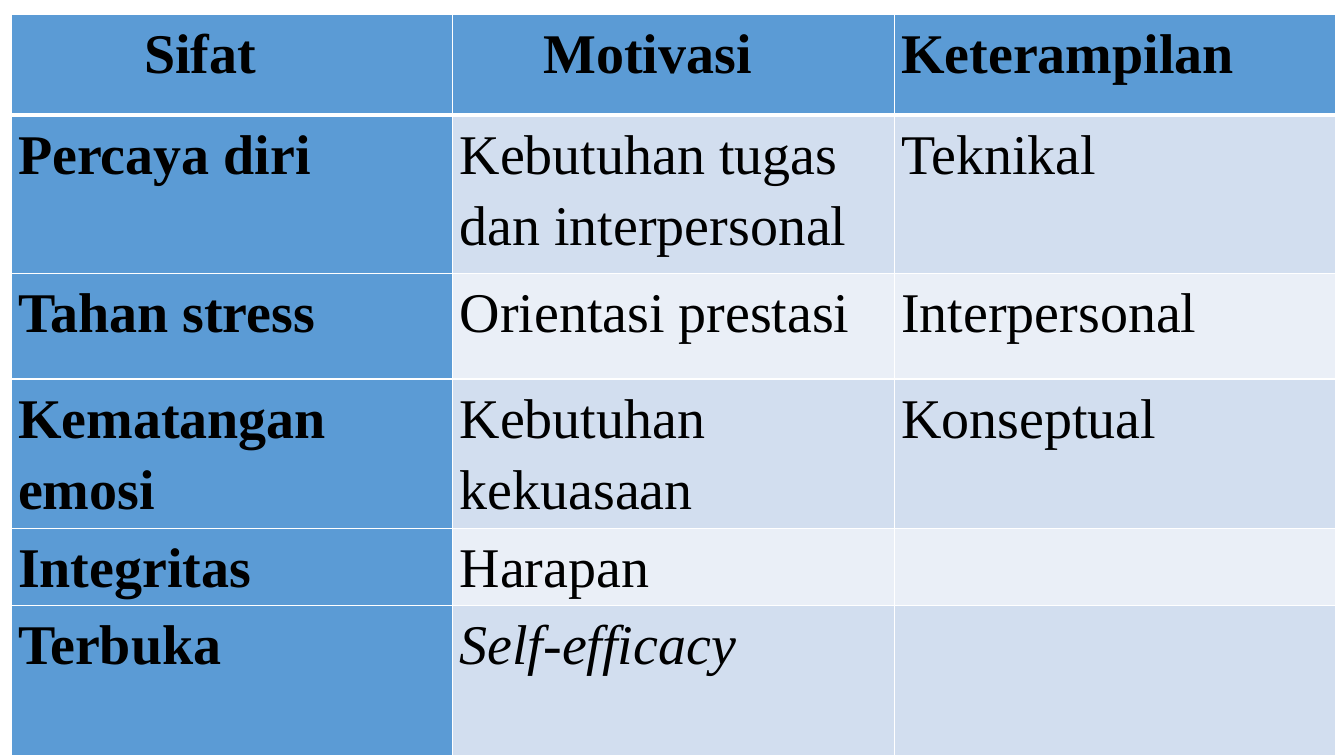
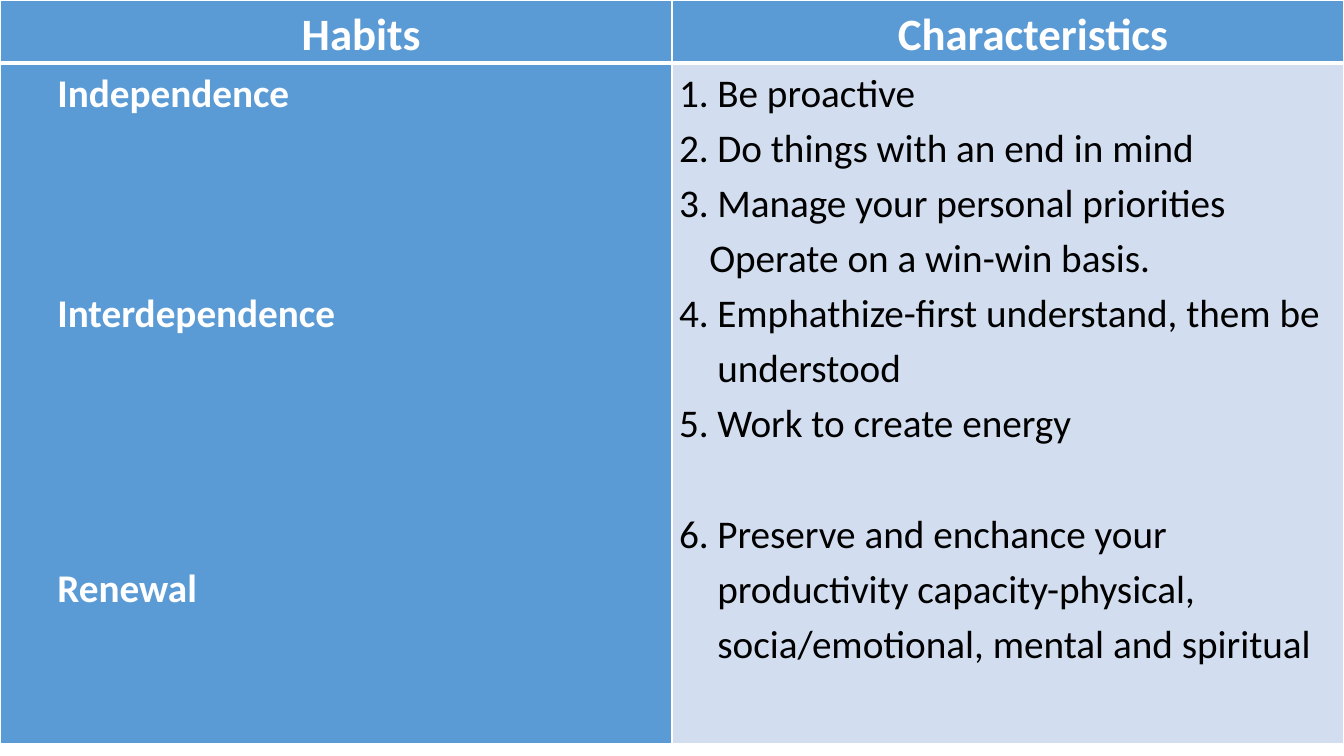
"""Build two table slides on leadership traits and on habits."""
from dataclasses import dataclass
from pptx import Presentation
from pptx.dml.color import RGBColor
from pptx.enum.text import PP_ALIGN
from pptx.oxml.ns import qn
from pptx.util import Inches, Pt
from lxml import etree


@dataclass(frozen=True)
class Theme:
    accent: str = "5B9BD5"
    bands: tuple = ("D2DEEF", "EAEFF7")
    white: str = "FFFFFF"
    black: str = "000000"
    serif: str = "Times New Roman"
    sans: str = "Calibri"
    trait_size: int = 40
    heading_size: int = 32
    habit_size: int = 28
    line_spacing: float = 1.15
    habit_pitch: float = 39.3
    inset: float = 0.07
    thin: int = 1
    thick: int = 3


@dataclass(frozen=True)
class Line:
    text: str
    indent: float = 0
    hanging: float = 0
    blank_lines: int = 0
    start: int = 0
    align: PP_ALIGN = PP_ALIGN.LEFT
    italic: bool = False


@dataclass(frozen=True)
class Style:
    font: str
    size: int
    color: str
    bold: bool = False


THEME = Theme()

TRAIT_HEADINGS = [("Sifat", 1.25), ("Motivasi", 0.83), ("Keterampilan", 0)]
TRAITS = [
    ("Percaya diri", "Kebutuhan tugas dan interpersonal", "Teknikal"),
    ("Tahan stress", "Orientasi prestasi", "Interpersonal"),
    ("Kematangan emosi", "Kebutuhan kekuasaan", "Konseptual"),
    ("Integritas", "Harapan", ""),
    ("Terbuka", "Self-efficacy", ""),
]
LEFT_ALIGNED = {"Kebutuhan tugas dan interpersonal"}
ITALIC = {"Self-efficacy"}
TRAIT_BOX = (0.11, 0.14, 13.14)
TRAIT_ROWS = [1, 1.57, 1.05, 1.48, 0.77, 1.49]

HABIT_HEADINGS = ["Habits", "Characteristics"]
HABITS = [("Independence", 0), ("Interdependence", 3), ("Renewal", 4)]
CHARACTERISTICS = [
    ("Be proactive", 1, 0),
    ("Do things with an end in mind", 1, 0),
    ("Manage your personal priorities", 1, 0),
    ("Operate on a win-win basis.", 0, 0),
    ("Emphathize-first understand, them be understood", 4, 0),
    ("Work to create energy", 4, 0),
    ("Preserve and enchance your productivity capacity-physical, "
     "socia/emotional, mental and spiritual", 6, 1),
]
HABIT_BOX = (0, 0, 13.33)
HABIT_ROWS = [0.62, 6.75]


def set_borders(cell, row):
    """Draw white cell borders, thick under the heading row."""
    properties = cell._tc.get_or_add_tcPr()
    widths = {
        "L": THEME.thin,
        "R": THEME.thin,
        "T": THEME.thick if row == 1 else THEME.thin,
        "B": THEME.thick if row == 0 else THEME.thin,
    }
    for side, width in widths.items():
        border = etree.SubElement(properties, qn(f"a:ln{side}"), w=str(Pt(width)))
        fill = etree.SubElement(border, qn("a:solidFill"))
        etree.SubElement(fill, qn("a:srgbClr"), val=THEME.white)


def write_line(paragraph, line, style):
    """Write one styled line with its indent, gap and number."""
    paragraph.alignment = line.align
    paragraph.line_spacing = THEME.line_spacing
    if line.blank_lines:
        paragraph.space_before = Pt(line.blank_lines * THEME.habit_pitch)
    properties = paragraph._p.get_or_add_pPr()
    properties.set("marL", str(Inches(line.indent)))
    properties.set("indent", str(Inches(-line.hanging)))
    if line.start:
        etree.SubElement(properties, qn("a:buAutoNum"),
                         type="arabicPeriod", startAt=str(line.start))
    run = paragraph.add_run()
    run.text = line.text
    font = run.font
    font.name, font.size = style.font, Pt(style.size)
    font.bold, font.italic = style.bold, line.italic
    font.color.rgb = RGBColor.from_string(style.color)


def fill_cell(cell, row, color, lines, style):
    """Format a cell and write its lines."""
    set_borders(cell, row)
    cell.fill.solid()
    cell.fill.fore_color.rgb = RGBColor.from_string(color)
    cell.margin_left = cell.margin_right = Inches(THEME.inset)
    cell.margin_top = cell.margin_bottom = 0
    frame = cell.text_frame
    for index, line in enumerate(lines):
        paragraph = frame.add_paragraph() if index else frame.paragraphs[0]
        write_line(paragraph, line, style)


def add_table_slide(presentation, box, heights, rows, style_for):
    """Add a slide holding one table with equal columns."""
    slide = presentation.slides.add_slide(presentation.slide_layouts[6])
    left, top, width = box
    columns = len(rows[0])
    table = slide.shapes.add_table(
        len(rows), columns, Inches(left), Inches(top),
        Inches(width), Inches(sum(heights))).table
    table.horz_banding = False
    for column in table.columns:
        column.width = Inches(width / columns)
    for row, (height, cells) in enumerate(zip(heights, rows)):
        table.rows[row].height = Inches(height)
        for column, lines in enumerate(cells):
            accented = row == 0 or column == 0
            color = THEME.accent if accented else THEME.bands[(row - 1) % 2]
            fill_cell(table.cell(row, column), row, color, lines,
                      style_for(row, accented))


def trait_style(row, accented):
    """Return the text style of a trait cell."""
    return Style(THEME.serif, THEME.trait_size, THEME.black, accented)


def habit_style(row, accented):
    """Return the text style of a habit cell."""
    size = THEME.habit_size if row else THEME.heading_size
    color = THEME.white if accented else THEME.black
    return Style(THEME.sans, size, color, accented)


def trait_line(text):
    """Return a trait entry with its alignment and slant."""
    align = PP_ALIGN.LEFT if text in LEFT_ALIGNED else PP_ALIGN.JUSTIFY
    return Line(text, align=align, italic=text in ITALIC)


def characteristic_line(text, start, blank_lines):
    """Return a numbered line, or a plain indented one."""
    indent, hanging = (0.38, 0.38) if start else (0.3, 0)
    return Line(text, indent, hanging, blank_lines, start)


def main():
    """Build and save the presentation."""
    presentation = Presentation()
    presentation.slide_width = Inches(13.33)
    presentation.slide_height = Inches(7.5)

    traits = [[[Line(text, indent)] for text, indent in TRAIT_HEADINGS]]
    traits += [[[trait_line(text)] if text else [] for text in row] for row in TRAITS]
    add_table_slide(presentation, TRAIT_BOX, TRAIT_ROWS, traits, trait_style)

    habits = [
        [[Line(text, 0.5, align=PP_ALIGN.CENTER)] for text in HABIT_HEADINGS],
        [[Line(text, 0.5, blank_lines=gap) for text, gap in HABITS],
         [characteristic_line(*entry) for entry in CHARACTERISTICS]],
    ]
    add_table_slide(presentation, HABIT_BOX, HABIT_ROWS, habits, habit_style)
    presentation.save("out.pptx")


if __name__ == "__main__":
    main()
